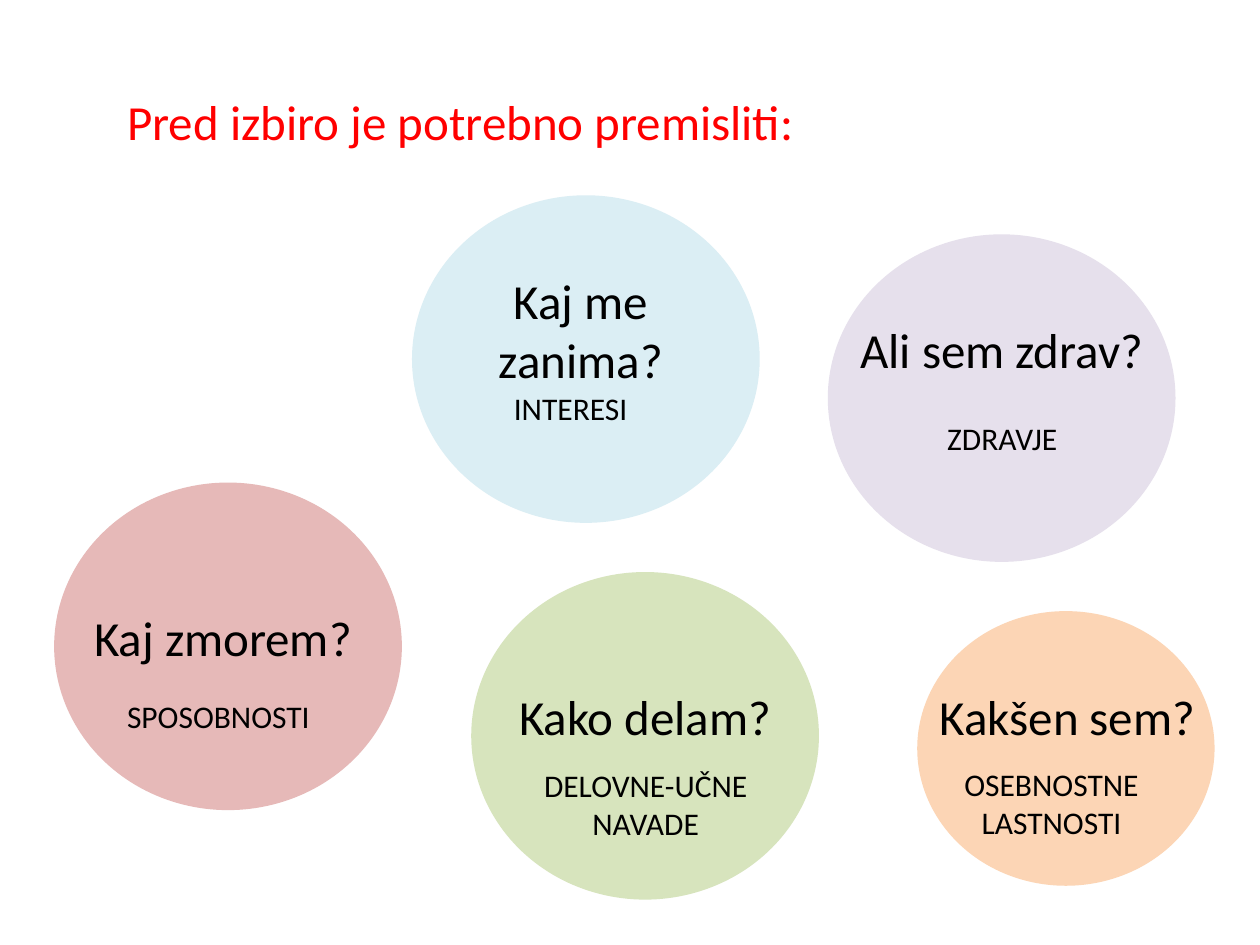
from pptx import Presentation
from pptx import util as u
from pptx.dml.color import RGBColor
from pptx.enum import shapes, text

IN = u.Inches
LEFT, MID = text.PP_ALIGN.LEFT, text.PP_ALIGN.CENTER


def paint(fill, hue):
    fill.solid()
    fill.fore_color.rgb = RGBColor.from_string(hue)


def write(box, words, size, hue, align):
    frame = box.text_frame
    frame.text = words
    frame.word_wrap = True
    frame.vertical_anchor = text.MSO_ANCHOR.TOP
    para = frame.paragraphs[0]
    para.alignment = align
    font = para.runs[0].font
    font.name, font.size = "Calibri", u.Pt(size)
    paint(font.fill, hue)


deck = Presentation()
deck.slide_width, deck.slide_height = IN(10), IN(7.5)
slide = deck.slides.add_slide(deck.slide_layouts[5])

# Title
title = slide.shapes.title
title.left, title.top, title.width, title.height = IN(0.91), IN(0.68), IN(7.32), IN(1.58)
write(title, "Pred izbiro je potrebno premisliti:", 28, "FF0000", LEFT)
title.text_frame.auto_size = text.MSO_AUTO_SIZE.NONE

# Circles: left, top, width, height, colour
circles = [
    (0.43, 3.83, 2.76, 2.6, "E6B9B8"),
    (3.74, 4.54, 2.76, 2.6, "D7E4BD"),
    (6.57, 1.86, 2.76, 2.6, "E6E0EC"),
    (3.27, 1.55, 2.76, 2.6, "DBEEF4"),
    (7.28, 4.85, 2.36, 2.18, "FCD5B5"),
]
for x, y, w, h, hue in circles:
    disc = slide.shapes.add_shape(shapes.MSO_SHAPE.OVAL, IN(x), IN(y), IN(w), IN(h))
    disc.shadow.inherit = False
    paint(disc.fill, hue)
    disc.line.fill.background()

# Questions and their topics: left, top, width, height, words, size, alignment
labels = [
    (0.59, 4.77, 2.36, 0.57, "Kaj zmorem?", 28, MID),
    (3.35, 2.1, 2.52, 1.04, "Kaj me zanima?", 28, MID),
    (3.82, 5.4, 2.6, 0.57, "Kako delam?", 28, MID),
    (6.57, 2.49, 2.76, 0.57, "Ali sem zdrav?", 28, MID),
    (7.36, 5.4, 2.28, 0.57, "Kakšen sem?", 28, LEFT),
    (0.91, 5.48, 1.81, 0.4, "SPOSOBNOSTI", 18, LEFT),
    (3.98, 3.04, 1.89, 0.4, "INTERESI", 18, LEFT),
    (7.13, 3.28, 1.65, 0.4, "ZDRAVJE", 18, MID),
    (4.06, 6.03, 2.13, 0.71, "DELOVNE-UČNE NAVADE", 18, MID),
    (7.44, 6.02, 1.81, 0.71, "OSEBNOSTNE LASTNOSTI", 18, MID),
]
for x, y, w, h, words, size, align in labels:
    box = slide.shapes.add_textbox(IN(x), IN(y), IN(w), IN(h))
    write(box, words, size, "000000", align)

deck.save("out.pptx")
